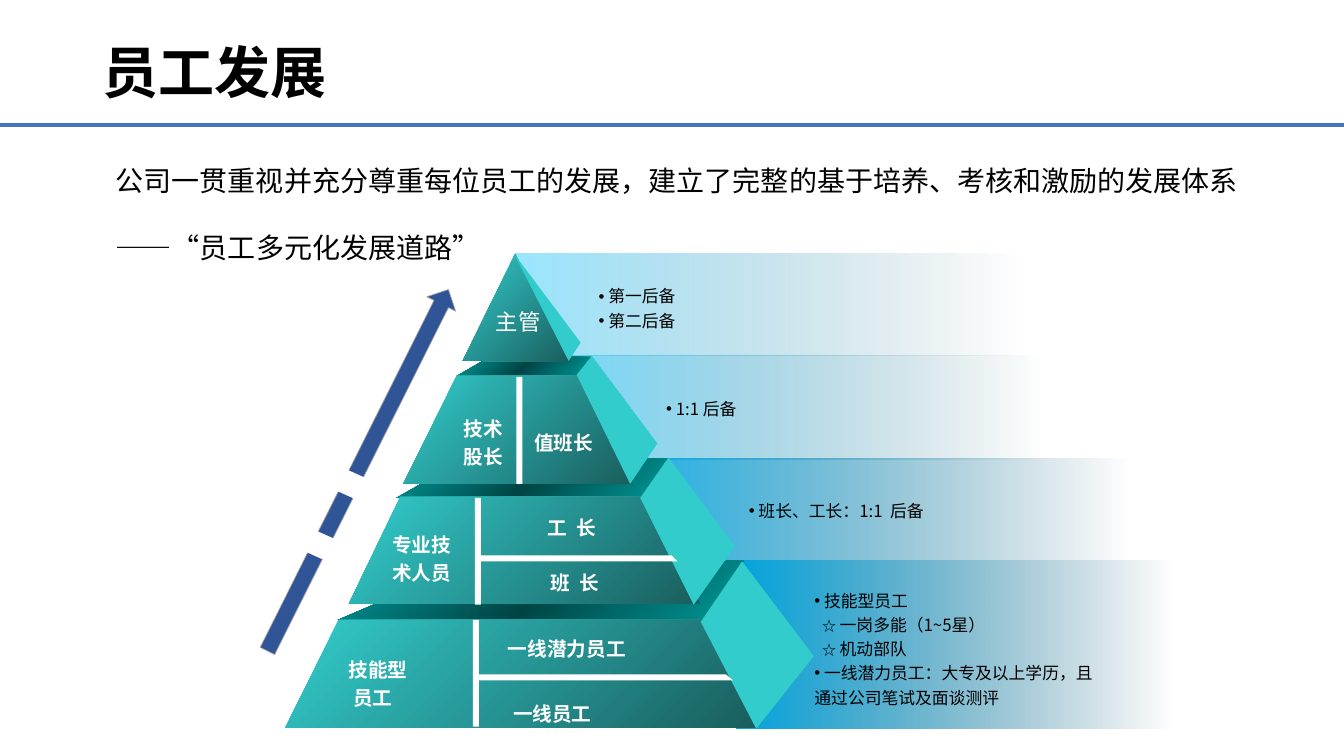
from lxml import etree
from pptx import Presentation
from pptx.dml.color import RGBColor
from pptx.enum.shapes import MSO_CONNECTOR, MSO_SHAPE as SHAPE
from pptx.enum.text import MSO_ANCHOR, PP_ALIGN as ALIGN
from pptx.oxml.ns import qn
from pptx.util import Inches, Pt

CJK, LATIN = "Noto Sans CJK SC", "Arial"
BLACK = RGBColor(0x00, 0x00, 0x00)
WHITE = RGBColor(0xFF, 0xFF, 0xFF)
RULE = RGBColor(0x44, 0x72, 0xC4)
ARROW = RGBColor(0x2F, 0x55, 0x97)
ARROW_EDGE = RGBColor(0xA5, 0xA5, 0xA5)
TEXT_SHADOW = RGBColor(0x00, 0x33, 0x66)
SIDE = RGBColor(0x33, 0xCC, 0xCC)
FRONT_DARK = RGBColor(0x1A, 0x5E, 0x5E)
LEDGE = RGBColor(0x00, 0x99, 0x99)
LEDGE_DARK = RGBColor(0x00, 0x45, 0x45)
SKY = RGBColor(0x33, 0xCC, 0xFF)
SKY_DARK = RGBColor(0x18, 0x5E, 0x76)
BLUE = RGBColor(0x00, 0xAB, 0xE8)
DEEP_BLUE = RGBColor(0x00, 0xA4, 0xDE)
BLUE_DARK = RGBColor(0x00, 0x4F, 0x6B)

# Gradient stops: position, colour, opacity (all in percent)
FRONT_STOPS = [(0, SIDE, 100), (100, FRONT_DARK, 100)]
LEDGE_STOPS = [(0, LEDGE, 100), (50, LEDGE_DARK, 100), (100, LEDGE, 100)]

BANDS = [
    ((5.11, 2.52, 5.03, 1.01), SKY, SKY_DARK, 50),
    ((5.33, 3.53, 5.03, 1.03), SKY, SKY_DARK, 70),
    ((6.18, 4.55, 5.03, 1.0), BLUE, BLUE_DARK, 90),
    ((7.31, 5.56, 4.33, 1.67), DEEP_BLUE, BLUE_DARK, 100),
]
LEDGES = [
    [(3.35, 6.15), (6.97, 6.15), (7.38, 5.56), (4.61, 5.61)],
    [(3.93, 4.94), (6.35, 4.94), (6.63, 4.55), (4.6, 4.56)],
    [(4.53, 3.73), (5.72, 3.74), (5.86, 3.54), (4.86, 3.54)],
]
FRONTS = [
    [(3.46, 5.99), (6.94, 5.99), (6.39, 4.93), (3.97, 4.93)],
    [(4, 4.8), (6.26, 4.8), (5.73, 3.73), (4.53, 3.73)],
    [(4.59, 3.58), (5.66, 3.59), (5.11, 2.52)],
    [(2.83, 7.22), (7.5, 7.22), (6.96, 6.15), (3.36, 6.15)],
]
SIDES = [
    [(6.35, 4.94), (6.88, 6), (7.29, 5.42), (6.63, 4.54)],
    [(6.25, 4.8), (6.52, 4.4), (5.87, 3.53), (5.72, 3.72)],
    [(7.5, 7.23), (8.07, 6.51), (7.36, 5.57), (6.95, 6.17)],
    [(5.64, 3.58), (5.76, 3.4), (5.1, 2.52)],
]
SHELF_GAPS = [
    [(4.71, 6.69), (7.2, 6.69), (7.27, 6.75), (4.73, 6.75)],
    [(4.76, 5.51), (6.66, 5.51), (6.72, 5.57), (4.77, 5.57)],
]
COLUMN_GAPS = [(4.19, 6.65), (4.21, 5.44), (4.62, 4.24)]
ARROW_GAPS = [(2.7, 5.28), (2.95, 4.65)]
LABELS = [
    ((4.97, 5.57, 1.46, 0.35), ["班  长"], ALIGN.CENTER),
    ((4.94, 5.02, 1.46, 0.35), ["工  长"], ALIGN.CENTER),
    ((3.36, 6.43, 1.46, 0.67), ["技能型", " 员工"], ALIGN.LEFT),
    ((4.94, 6.22, 1.57, 0.38), ["一线潜力员工"], ALIGN.LEFT),
    ((4.99, 6.87, 1.57, 0.35), ["一线员工"], ALIGN.LEFT),
    ((3.79, 5.19, 0.89, 0.63), ["专业技术人员"], ALIGN.LEFT),
    ((4.5, 4.04, 0.68, 0.67), ["技术", "股长"], ALIGN.LEFT),
    ((5.2, 4.18, 0.79, 0.38), ["值班长"], ALIGN.LEFT),
]
NOTES = [
    ((5.84, 2.75, 2.97, 0.59), [" 第一后备", " 第二后备"]),
    ((6.51, 3.87, 4.14, 0.34), [" 1:1 后备"]),
    ((7.33, 4.88, 2.97, 0.34), [" 班长、工长：1:1  后备"]),
    ((7.98, 5.77, 2.97, 1.56), [" 技能型员工", "  ☆ 一岗多能（1~5星）", "  ☆ 机动部队",
                                " 一线潜力员工：大专及以上学历，且通过公司笔试及面谈测评"]),
]


def add_color(parent, color):
    return etree.SubElement(parent, qn("a:srgbClr"), val=str(color))


def paint(shape, color, edge=None, width=0):
    shape.shadow.inherit = False
    shape.fill.solid()
    shape.fill.fore_color.rgb = color
    if edge is None:
        shape.line.fill.background()
    else:
        shape.line.color.rgb = edge
        shape.line.width = Pt(width)


def paint_gradient(shape, stops, angle):
    shape.shadow.inherit = False
    shape.line.fill.background()
    shape.fill.gradient()
    shape.fill.gradient_angle = angle
    stop_list = shape._element.spPr.find(".//" + qn("a:gsLst"))
    for old in list(stop_list):
        stop_list.remove(old)
    for position, color, opacity in stops:
        stop = etree.SubElement(stop_list, qn("a:gs"), pos=str(position * 1000))
        clr = add_color(stop, color)
        if opacity < 100:
            etree.SubElement(clr, qn("a:alpha"), val=str(opacity * 1000))


def add_polygon(s, points):
    first, *rest = [(Inches(x), Inches(y)) for x, y in points]
    builder = s.shapes.build_freeform(*first)
    builder.add_line_segments(rest, close=True)
    return builder.convert_to_shape()


def add_block(s, kind, box, rotation=0):
    sp = s.shapes.add_shape(kind, *map(Inches, box))
    sp.rotation = rotation
    return sp


def format_run(r, size, font, color, bold=False):
    r.font.size, r.font.name, r.font.bold = Pt(size), font, bold
    r.font.color.rgb = color
    etree.SubElement(r._r.get_or_add_rPr(), qn("a:ea"), typeface=CJK)


def shade_run(r):
    """Put a small drop shadow behind the characters."""
    effects = etree.Element(qn("a:effectLst"))
    shadow = etree.SubElement(effects, qn("a:outerShdw"), dist="25400", dir="2700000")
    add_color(shadow, TEXT_SHADOW)
    r._r.rPr.find(qn("a:solidFill")).addnext(effects)


def add_bullet(p):
    pPr = p._p.get_or_add_pPr()
    add_color(etree.SubElement(pPr, qn("a:buClr")), BLACK)
    etree.SubElement(pPr, qn("a:buFont"), typeface=LATIN)
    etree.SubElement(pPr, qn("a:buChar"), char="•")


def add_text(s, box, lines, size, font, color, spacing=1.2, bold=False, align=ALIGN.LEFT):
    tf = s.shapes.add_textbox(*map(Inches, box)).text_frame
    tf.word_wrap = True
    tf.text = "\n".join(lines)
    for p in tf.paragraphs:
        p.line_spacing, p.alignment = spacing, align
        for r in p.runs:
            format_run(r, size, font, color, bold)
    return tf


def add_label(s, box, lines, align, size=14, spacing=1.2, bold=True):
    tf = add_text(s, box, lines, size, LATIN, WHITE, spacing, bold, align)
    for p in tf.paragraphs:
        shade_run(p.runs[0])
    return tf


def add_note(s, box, lines):
    tf = add_text(s, box, lines, 12, CJK, BLACK)
    for p in tf.paragraphs:
        head, star, tail = p.text.partition("☆")
        if not star:
            add_bullet(p)
            continue
        p.runs[0].text = head
        for text, size in ((star, 10), (tail, 12)):
            r = p.add_run()
            r.text = text
            format_run(r, size, CJK, BLACK)


def add_heading(s):
    title = s.shapes.title
    title.left, title.top, title.width, title.height = map(Inches, (0.92, 0.02, 11.5, 1.45))
    tf = title.text_frame
    tf.text = "员工发展"
    tf.vertical_anchor = MSO_ANCHOR.MIDDLE
    p = tf.paragraphs[0]
    p.alignment, p.line_spacing = ALIGN.LEFT, 0.9
    format_run(p.runs[0], 40, CJK, BLACK, bold=True)
    rule = s.shapes.add_connector(MSO_CONNECTOR.STRAIGHT, 0, Inches(1.24),
                                  Inches(13.33), Inches(1.24))
    rule.line.color.rgb, rule.line.width = RULE, Pt(3)
    etree.SubElement(rule._element.spPr, qn("a:effectLst"))


def add_pyramid(s):
    for box, light, dark, opacity in BANDS:
        band = add_block(s, SHAPE.RECTANGLE, box)
        paint_gradient(band, [(0, light, opacity), (100, dark, 0)], 0)
    for faces, stops in ((LEDGES, LEDGE_STOPS), (FRONTS, FRONT_STOPS)):
        for points in faces:
            paint_gradient(add_polygon(s, points), stops, 315)
    for faces, color in ((SIDES, SIDE), (SHELF_GAPS, WHITE)):
        for points in faces:
            paint(add_polygon(s, points), color)
    for x, y in COLUMN_GAPS:
        paint(add_block(s, SHAPE.RECTANGLE, (x, y, 1.06, 0.06), 90), WHITE)


def add_career_arrow(s):
    arrow = add_block(s, SHAPE.DOWN_ARROW, (3.39, 2.66, 0.32, 4.01), 206.6)
    paint(arrow, ARROW, ARROW_EDGE, 0.5)
    for x, y in ARROW_GAPS:
        gap = add_block(s, SHAPE.RECTANGLE, (x, y, 0.86, 0.22), 24.1)
        paint(gap, WHITE, WHITE, 1)


def main():
    prs = Presentation()
    prs.slide_width, prs.slide_height = Inches(13.33), Inches(7.5)
    s = prs.slides.add_slide(prs.slide_layouts[5])
    add_heading(s)
    add_text(s, (1.05, 1.24, 11.36, 1.33),
             ["公司一贯重视并充分尊重每位员工的发展，建立了完整的基于培养、考核和激励的发展体系",
              "——“员工多元化发展道路”"], 20, CJK, BLACK, spacing=2.0)
    add_pyramid(s)
    add_career_arrow(s)
    top = add_label(s, (4.63, 3.14, 1.02, 0.23), ["主管"], ALIGN.CENTER, 16, 0.4, False)
    top.paragraphs[0].space_before = Pt(8)
    for box, lines, align in LABELS:
        add_label(s, box, lines, align)
    for box, lines in NOTES:
        add_note(s, box, lines)
    prs.save("out.pptx")


if __name__ == "__main__":
    main()
